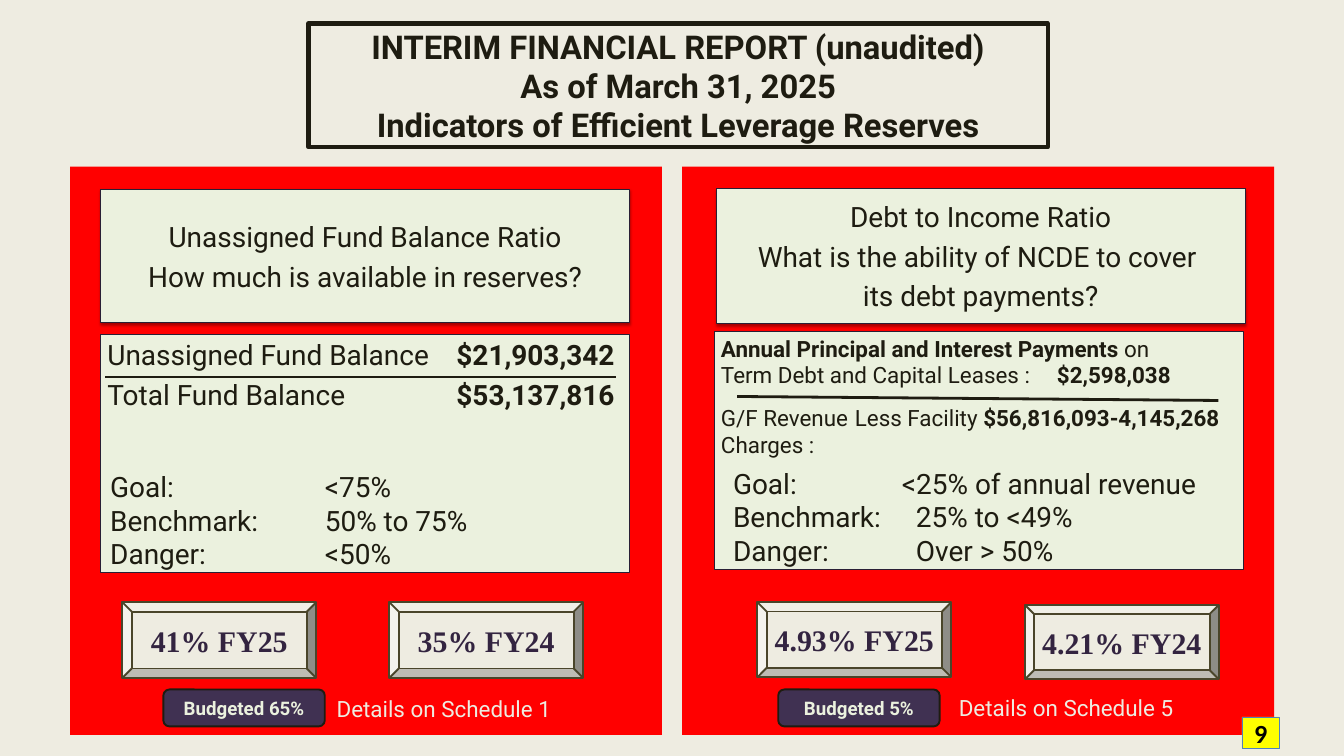
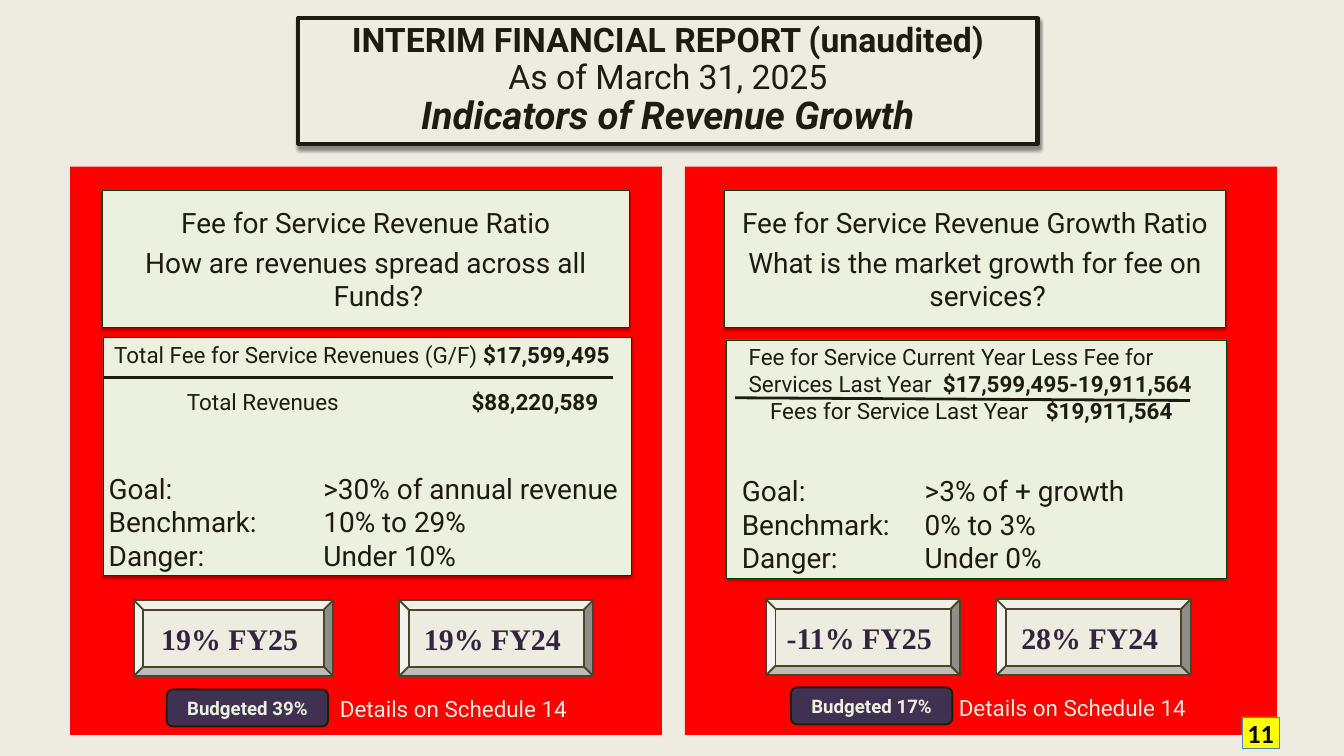
import dataclasses

import lxml.etree
import pptx
import pptx.dml.color
import pptx.enum.shapes
import pptx.enum.text
import pptx.oxml.ns
import pptx.util

Pt = pptx.util.Pt
SHAPE = pptx.enum.shapes.MSO_SHAPE
ALIGN = pptx.enum.text.PP_ALIGN
ANCHOR = pptx.enum.text.MSO_ANCHOR
qn = pptx.oxml.ns.qn

COLOURS = {
    "paper": "EEECE1", "panel": "FF0000", "ink": "1E1C11", "card": "EBF1DE",
    "violet": "291F35", "green": "003E00", "bevel": "4A452A", "score": "332440",
    "badge": "403152", "page": "FFFF00", "page_edge": "4F81BD", "black": "000000",
}
BODY, SCORE, PAGE = "Roboto", "Times New Roman", "Calibri"
PANEL_TOP, PANEL_WIDTH, PANEL_HEIGHT = 178.5, 634.3, 609
CARD_SHADOW = (35, 3.1, 1.8)
TITLE_SHADOW = (43, 4, 4)


@dataclasses.dataclass
class Line:
    """A paragraph; *stars* enclose bold text, tabs are measured from the text edge."""
    text: str
    size: float = 30
    tabs: tuple = ()
    before: float = 0
    colour: str = "ink"


@dataclasses.dataclass
class Panel:
    """Boxes are (left, top, width, height) from the panel's corner."""
    left: float
    heading: list
    heading_box: tuple
    formula: list
    formula_box: tuple
    rule: tuple
    grades: list
    grade_tabs: tuple
    grades_box: tuple
    scores: list
    budget: str
    badge_at: tuple
    details: str
    details_box: tuple
    edge: str = "violet"
    formula_shadow: tuple = None
    formula_inset: float = 7.2


def rgb(name):
    return pptx.dml.color.RGBColor.from_string(COLOURS[name])


def add_shadow(shape, opacity, blur, distance):
    effects = shape.fill._xPr.find(qn("a:effectLst"))
    outer = lxml.etree.SubElement(
        effects, qn("a:outerShdw"), blurRad=str(Pt(blur)), dist=str(Pt(distance)),
        dir="5400000", rotWithShape="0")
    black = lxml.etree.SubElement(outer, qn("a:srgbClr"), val=COLOURS["black"])
    lxml.etree.SubElement(black, qn("a:alpha"), val=str(opacity * 1000))


def add_box(slide, kind, box, fill=None, edge=None, weight=0.75, shadow=None):
    shape = slide.shapes.add_shape(kind, *map(Pt, box))
    shape.shadow.inherit = False
    if fill:
        shape.fill.solid()
        shape.fill.fore_color.rgb = rgb(fill)
    else:
        shape.fill.background()
    if edge:
        shape.line.color.rgb = rgb(edge)
        shape.line.width = Pt(weight)
    else:
        shape.line.fill.background()
    if shadow:
        add_shadow(shape, *shadow)
    return shape


def add_text_box(slide, box):
    return slide.shapes.add_textbox(*map(Pt, box))


def set_tabs(paragraph, stops):
    if stops:
        tab_list = lxml.etree.SubElement(paragraph._p.get_or_add_pPr(), qn("a:tabLst"))
        for stop in stops:
            lxml.etree.SubElement(tab_list, qn("a:tab"), pos=str(Pt(stop)), algn="l")


def set_font(font, size, colour, name=BODY, bold=False):
    font.size, font.name, font.bold = Pt(size), name, bold
    font.color.rgb = rgb(colour)


def write(shape, lines, align=ALIGN.LEFT, anchor=ANCHOR.TOP, hanging=0):
    frame = shape.text_frame
    frame.word_wrap = True
    frame.vertical_anchor = anchor
    for index, line in enumerate(lines):
        paragraph = frame.add_paragraph() if index else frame.paragraphs[0]
        paragraph.alignment = align
        paragraph.space_before = Pt(line.before)
        set_tabs(paragraph, line.tabs)
        if hanging:
            properties = paragraph._p.get_or_add_pPr()
            properties.set("marL", str(Pt(hanging)))
            properties.set("indent", str(-Pt(hanging)))
        set_font(paragraph.font, line.size, line.colour)
        for part, text in enumerate(line.text.split("*")):
            if text:
                run = paragraph.add_run()
                run.text = text
                set_font(run.font, line.size, line.colour, bold=part % 2 == 1)


def write_label(shape, text, size, colour, name):
    """One bold centred line."""
    frame = shape.text_frame
    frame.word_wrap = True
    frame.vertical_anchor = ANCHOR.MIDDLE
    paragraph = frame.paragraphs[0]
    paragraph.text = text
    paragraph.alignment = ALIGN.CENTER
    set_font(paragraph.font, size, colour, name, bold=True)


def clear_insets(frame):
    frame.margin_left = frame.margin_right = frame.margin_top = frame.margin_bottom = 0


def add_title(slide, box, lines, spacing=1.0, fill=None, shadow=None):
    """Each line is (text, size, bold, italic)."""
    shape = add_box(slide, SHAPE.RECTANGLE, box, fill, "ink", 4.5, shadow)
    frame = shape.text_frame
    frame.word_wrap = True
    frame.vertical_anchor = ANCHOR.MIDDLE
    clear_insets(frame)
    paragraph = frame.paragraphs[0]
    paragraph.alignment = ALIGN.CENTER
    paragraph.line_spacing = spacing
    for index, (text, size, bold, italic) in enumerate(lines):
        if index:
            paragraph.add_line_break()
        run = paragraph.add_run()
        run.text = text
        set_font(run.font, size, "ink", bold=bold)
        run.font.italic = italic


def add_rule(slide, x1, y1, x2, y2):
    rule = slide.shapes.add_connector(
        pptx.enum.shapes.MSO_CONNECTOR.STRAIGHT, *map(Pt, (x1, y1, x2, y2)))
    rule.line.color.rgb = rgb("ink")
    rule.line.width = Pt(3)
    lxml.etree.SubElement(rule._element.spPr, qn("a:effectLst"))


def add_panel(slide, panel):
    def place(left, top, width, height):
        return panel.left + left, PANEL_TOP + top, width, height

    add_box(slide, SHAPE.RECTANGLE, place(0, 0, PANEL_WIDTH, PANEL_HEIGHT), "panel")

    heading = add_box(slide, SHAPE.RECTANGLE, place(*panel.heading_box), "card",
                      panel.edge, shadow=CARD_SHADOW)
    write(heading, [Line(text, before=6.5) for text in panel.heading],
          ALIGN.CENTER, ANCHOR.MIDDLE, hanging=27)

    formula = add_box(slide, SHAPE.RECTANGLE, place(*panel.formula_box), "card",
                      panel.edge, shadow=panel.formula_shadow)
    write(formula, panel.formula)
    formula.text_frame.margin_left = Pt(panel.formula_inset)
    x1, y1, x2, y2 = panel.rule
    add_rule(slide, panel.left + x1, PANEL_TOP + y1, panel.left + x2, PANEL_TOP + y2)

    names = ("Goal:", "Benchmark:", "Danger:")
    write(add_text_box(slide, place(*panel.grades_box)),
          [Line(f"{name}\t{value}", tabs=(tab,))
           for name, value, tab in zip(names, panel.grades, panel.grade_tabs)])

    for text, box in panel.scores:
        score = add_box(slide, SHAPE.BEVEL, place(*box), "paper", "bevel", 2)
        write_label(score, text, 32, "score", SCORE)

    badge = add_box(slide, SHAPE.ROUNDED_RECTANGLE, place(*panel.badge_at, 173, 39.6),
                    "badge", "ink", 2)
    write_label(badge, f"Budgeted {panel.budget}", 20, "card", BODY)
    write(add_text_box(slide, place(*panel.details_box)),
          [Line(panel.details, 24, colour="paper")])


def add_page_number(slide, number):
    shape = add_box(slide, SHAPE.RECTANGLE, (1330.6, 768.2, 40.3, 33.8), "page", "page_edge")
    clear_insets(shape.text_frame)
    write_label(shape, number, 28, "black", PAGE)


FUND_BALANCE = Panel(
    left=75,
    heading=["Unassigned Fund Balance Ratio", "How much is available in reserves?"],
    heading_box=(33, 24.5, 566.6, 142.6),
    formula=[Line("Unassigned Fund Balance\t*$21,903,342*", tabs=(374,)),
             Line("Total Fund Balance\t*$53,137,816*", tabs=(374,), before=6.5)],
    formula_box=(33, 180, 566.6, 255), rule=(38, 225.4, 584.5, 225.4),
    grades=["<75%", "50% to 75%", "<50%"], grade_tabs=(230,) * 3,
    grades_box=(36, 321, 566.6, 116.6),
    scores=[("41% FY25", (56, 466.6, 208, 81.4)), ("35% FY24", (342, 466.6, 208, 81.4))],
    budget="65%", badge_at=(100, 560.2),
    details="Details on Schedule 1", details_box=(278.5, 563, 250.6, 36))

DEBT = Panel(
    left=730.8,
    heading=["Debt to Income Ratio", "What is the ability of NCDE to cover ",
             "its debt payments?"],
    heading_box=(36.7, 23.8, 566.6, 144),
    formula=[Line("*Annual Principal and Interest Payments *on", 24),
             Line("Term Debt and Capital Leases :\t*$2,598,038*", 24, (360,)),
             Line("G/F Revenue\tLess Facility *$56,816,093-4,145,268*", 24, (143.5,), 17),
             Line("Charges :", 24)],
    formula_box=(34.6, 176.5, 566.6, 255), rule=(59, 246.3, 574.6, 250.6),
    grades=["<25% of annual revenue", "25% to <49%", "Over > 50%"],
    grade_tabs=(181, 196, 196), grades_box=(47.5, 317.6, 540, 116.6),
    scores=[("4.93% FY25 ", (80.6, 466.6, 208, 80.6)),
            ("4.21% FY24", (367.2, 469.5, 208, 80))],
    budget="5%", badge_at=(103, 560.2),
    details="Details on Schedule 5", details_box=(289.4, 561.7, 275.8, 36))

FEE_SHARE = Panel(
    left=75, edge="green", formula_shadow=CARD_SHADOW,
    heading=["Fee for Service Revenue Ratio", "How are revenues spread across all Funds?"],
    heading_box=(34.4, 26, 565.2, 146.2),
    formula=[Line("\tTotal Fee for Service Revenues (G/F) *$17,599,495*", 24, (5,)),
             Line("\tTotal Revenues\t*$88,220,589*", 24, (83, 388), 22)],
    formula_box=(35.2, 183, 566, 255), rule=(35.2, 226, 581.6, 226),
    grades=[">30% of annual revenue", "10% to 29%", "Under 10%"], grade_tabs=(230,) * 3,
    grades_box=(34.4, 322.6, 565.2, 116.6),
    scores=[("19% FY25 ", (68.3, 464.5, 213.8, 81.4)),
            ("19% FY24 ", (352.7, 464.5, 208, 81.4))],
    budget="39%", badge_at=(103.6, 560.2),
    details="Details on Schedule 14", details_box=(282, 563, 279.4, 36))

FEE_GROWTH = Panel(
    left=733.7, edge="green", formula_shadow=CARD_SHADOW, formula_inset=23.8,
    heading=["Fee for Service Revenue Growth Ratio",
             "What is the market growth for fee on services?"],
    heading_box=(42.5, 25.3, 537, 147),
    formula=[Line("Fee for Service Current Year Less Fee for Services Last Year"
                  "\t*$17,599,495-19,911,564*", 24, (208,)),
             Line("\tFees for Service Last Year\t*$19,911,564*", 24, (23, 318.5))],
    formula_box=(44.6, 185.8, 535.7, 255), rule=(54, 247.7, 541.4, 250.6),
    grades=[">3% of + growth", "0% to 3%", "Under 0%"], grade_tabs=(196,) * 3,
    grades_box=(54, 325.5, 508, 116.6),
    scores=[("-11% FY25 ", (87, 463.7, 208, 81.4)), ("28% FY24 ", (334, 463.7, 208, 81.4))],
    budget="17%", badge_at=(113.7, 558),
    details="Details on Schedule 14", details_box=(286.5, 561.7, 275.8, 36))


def add_report_slide(deck, title, panels, number):
    slide = deck.slides.add_slide(deck.slide_layouts[6])
    slide.background.fill.solid()
    slide.background.fill.fore_color.rgb = rgb("paper")
    add_title(slide, **title)
    for panel in panels:
        add_panel(slide, panel)
    add_page_number(slide, number)


def main():
    deck = pptx.Presentation()
    deck.slide_width, deck.slide_height = Pt(1440), Pt(810)
    report, date = "INTERIM FINANCIAL REPORT (unaudited)", "As of March 31, 2025"
    reserves = dict(
        box=(330.5, 25.2, 792, 132.5),
        lines=[(text, 35.1, True, False) for text in
               (report, date, "Indicators of Efficient Leverage Reserves")])
    growth = dict(
        box=(319.7, 19.4, 792, 134.6), spacing=0.9, fill="paper", shadow=TITLE_SHADOW,
        lines=[(report, 36.1, True, False), (date, 36.1, False, False),
               ("Indicators of Revenue Growth", 41, True, True)])
    add_report_slide(deck, reserves, (FUND_BALANCE, DEBT), "9")
    add_report_slide(deck, growth, (FEE_SHARE, FEE_GROWTH), "11")
    deck.save("out.pptx")


if __name__ == "__main__":
    main()
